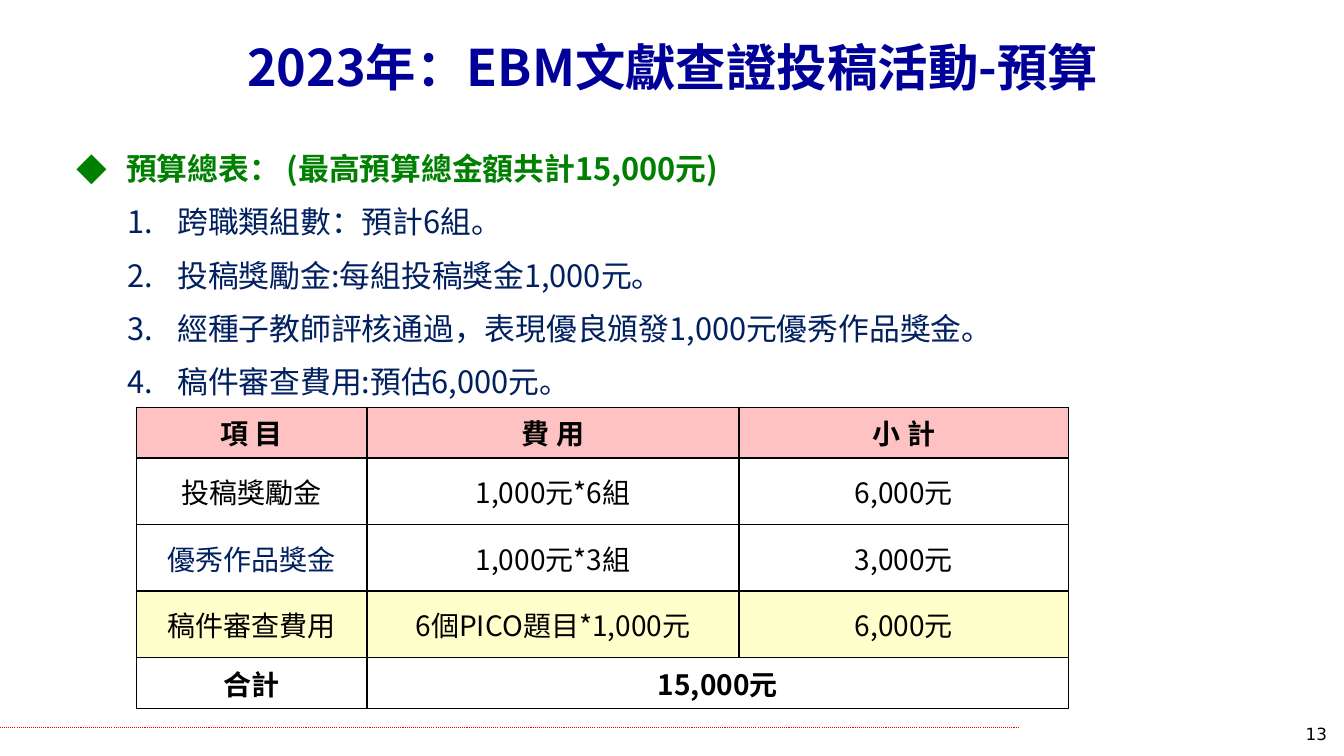
from lxml.etree import SubElement
from pptx import Presentation
from pptx.dml.color import RGBColor
from pptx.enum.dml import MSO_LINE
from pptx.enum.shapes import MSO_CONNECTOR
from pptx.enum.text import MSO_ANCHOR, MSO_AUTO_SIZE, PP_ALIGN
from pptx.oxml import parse_xml
from pptx.oxml.ns import nsdecls, qn
from pptx.util import Inches, Pt

FONT = "Noto Sans CJK SC"
NAVY = "002060"
HEAD = ["項 目", "費 用", "小 計"]
ROWS = [
    ["投稿獎勵金", "1,000元*6組", "6,000元"],
    ["優秀作品獎金", "1,000元*3組", "3,000元"],
    ["稿件審查費用", "6個PICO題目*1,000元", "6,000元"],
]
TOTAL = ["合計", "15,000元", ""]
LEAD = "預算總表： (最高預算總金額共計15,000元)"
ITEMS = [
    "跨職類組數：預計6組。",
    "投稿獎勵金:每組投稿獎金1,000元。",
    "經種子教師評核通過，表現優良頒發1,000元優秀作品獎金。",
    "稿件審查費用:預估6,000元。",
]


def rgb(code):
    return RGBColor.from_string(code)


def style(para, size, color, bold=False, name=FONT):
    font = para.font
    font.size, font.bold, font.name = Pt(size), bold, name
    font.color.rgb = rgb(color)
    props = para._p.get_or_add_pPr().find(qn("a:defRPr"))
    SubElement(props, qn("a:ea"), typeface=name)


def place(shape, left, top, width, height):
    shape.left, shape.top = Inches(left), Inches(top)
    shape.width, shape.height = Inches(width), Inches(height)


def add_title(slide, text):
    title = slide.shapes.title
    place(title, 0.78, 0.24, 11.78, 0.84)
    frame = title.text_frame
    frame.text = text
    frame.vertical_anchor = MSO_ANCHOR.MIDDLE
    para = frame.paragraphs[0]
    para.alignment = PP_ALIGN.CENTER
    style(para, 36, "000099", True)


def add_item(para, text, left, hang, tag, **mark):
    para.text = text
    para.line_spacing = Pt(32)
    para.space_before, para.space_after = Pt(0), Pt(6)
    props = para._p.get_or_add_pPr()
    props.set("marL", str(Inches(left)))
    props.set("indent", str(-Inches(hang)))
    SubElement(props, qn("a:buFont"), typeface=FONT)
    SubElement(props, qn(tag), **mark)


def add_list(slide):
    body = slide.placeholders[1]
    place(body, 0.66, 1.36, 12.68, 2.68)
    frame = body.text_frame
    frame.auto_size = MSO_AUTO_SIZE.NONE
    lead = frame.paragraphs[0]
    add_item(lead, LEAD, 0.49, 0.49, "a:buChar", char="◆")
    style(lead, 22, "008000", True)
    for text in ITEMS:
        para = frame.add_paragraph()
        para.level = 1
        add_item(para, text, 1, 0.5, "a:buAutoNum", type="arabicPeriod")
        style(para, 22, NAVY)


def set_cell(cell, text, fill, color, bold):
    props = cell._tc.get_or_add_tcPr()
    for side in "LRTB":
        props.append(parse_xml(
            f'<a:ln{side} {nsdecls("a")} w="12700"><a:solidFill>'
            f'<a:srgbClr val="000000"/></a:solidFill></a:ln{side}>'))
    cell.fill.solid()
    cell.fill.fore_color.rgb = rgb(fill)
    cell.vertical_anchor = MSO_ANCHOR.MIDDLE
    cell.text = text
    para = cell.text_frame.paragraphs[0]
    para.alignment = PP_ALIGN.CENTER
    style(para, 20, color, bold)


def add_budget(slide):
    data = [HEAD, *ROWS, TOTAL]
    fills = ["FFC2C2", "FFFFFF", "FFFFFF", "FFFFCC", "FFFFFF"]
    frame = slide.shapes.add_table(
        len(data), len(HEAD), Inches(1.35), Inches(4.04), Inches(9.25), Inches(2.9))
    table = frame.table
    table.first_row = table.horz_banding = False
    for col, width in zip(table.columns, [2.29, 3.69, 3.27]):
        col.width = Inches(width)
    for row, high in zip(table.rows, [0.45, 0.66, 0.66, 0.66, 0.48]):
        row.height = Inches(high)
    for r, (texts, fill) in enumerate(zip(data, fills)):
        bold = texts in (HEAD, TOTAL)
        for c, text in enumerate(texts):
            color = NAVY if text == "優秀作品獎金" else "000000"
            set_cell(table.cell(r, c), text, fill, color, bold)
    last = len(data) - 1
    table.cell(last, 1).merge(table.cell(last, 2))


def add_rule(slide):
    y = Inches(7.22)
    rule = slide.shapes.add_connector(
        MSO_CONNECTOR.STRAIGHT, Inches(0), y, Inches(10.11), y)
    rule.line.color.rgb = rgb("FF0000")
    rule.line.width = Pt(0.75)
    rule.line.dash_style = MSO_LINE.ROUND_DOT
    SubElement(rule._element.spPr, qn("a:effectLst"))


def add_number(slide, text):
    box = slide.shapes.add_textbox(
        Inches(10.37), Inches(7.13), Inches(2.89), Inches(0.52))
    box.text_frame.word_wrap = True
    para = box.text_frame.paragraphs[0]
    para.text = text
    para.alignment = PP_ALIGN.RIGHT
    style(para, 12, "000000", name="DejaVu Sans")


def main():
    deck = Presentation()
    deck.slide_width, deck.slide_height = Inches(13.33), Inches(7.5)
    slide = deck.slides.add_slide(deck.slide_layouts[1])
    add_rule(slide)
    add_budget(slide)
    add_list(slide)
    add_title(slide, "2023年：EBM文獻查證投稿活動-預算")
    add_number(slide, "13")
    deck.save("out.pptx")


if __name__ == "__main__":
    main()
